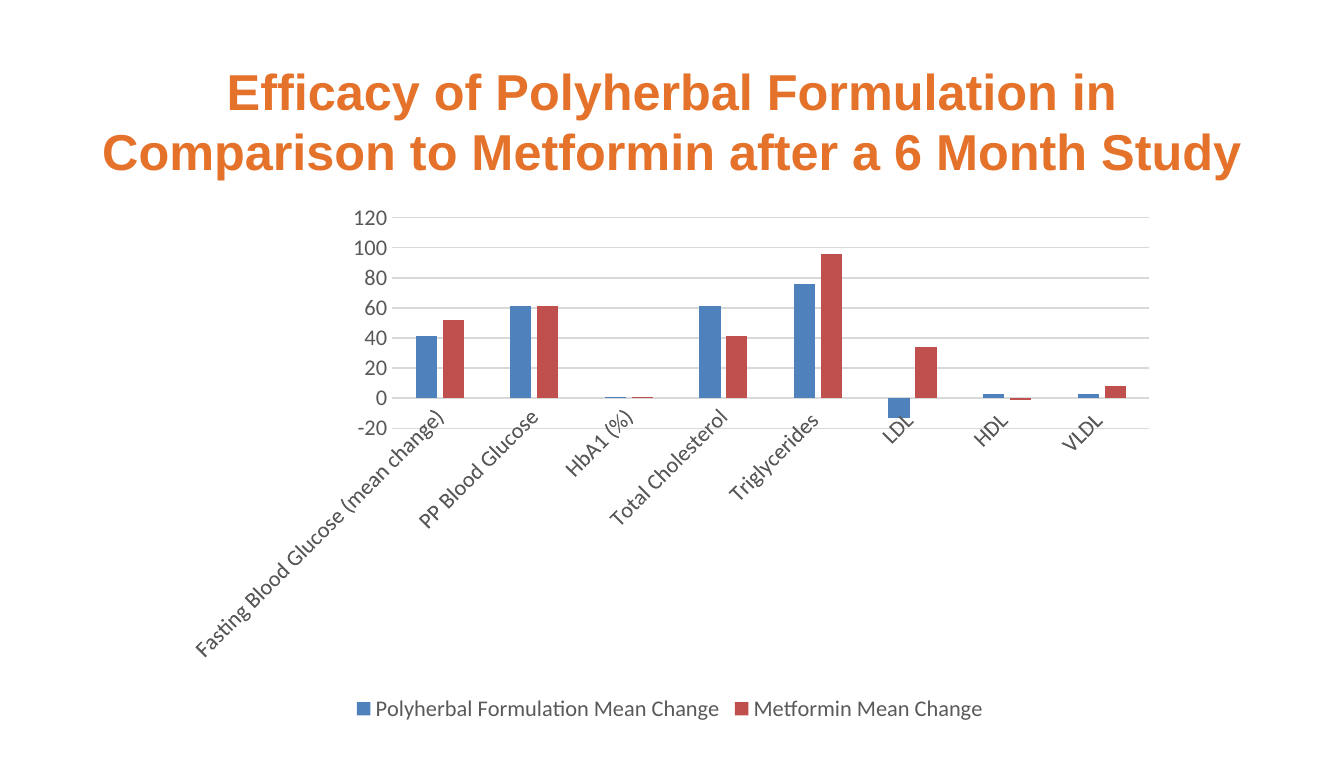
from dataclasses import dataclass

from lxml import etree
from pptx import Presentation
from pptx.chart.data import CategoryChartData
from pptx.dml.color import RGBColor
from pptx.enum.chart import XL_CHART_TYPE, XL_LEGEND_POSITION, XL_TICK_MARK
from pptx.enum.text import MSO_ANCHOR, PP_ALIGN
from pptx.oxml.ns import qn
from pptx.util import Pt

EMU_PER_PX = 9144  # 100 px to the inch
SLIDE_SIZE = (1000, 563)
TITLE_BOX = (50, 63, 900, 53)
CHART_BOX = (127, 152, 743, 389)
PLOT_BOX = (165, 9, 563, 157)  # within the chart box

TITLE = ("Efficacy of Polyherbal Formulation in Comparison to Metformin "
         "after a 6 Month Study")
MEASURES = ["Fasting Blood Glucose (mean change)", "PP Blood Glucose", "HbA1 (%)",
            "Total Cholesterol", "Triglycerides ", "LDL ", "HDL ", "VLDL "]
MEAN_CHANGES = {
    "Polyherbal Formulation Mean Change": [41, 61, 1, 61, 76, -13, 3, 3],
    "Metformin Mean Change": [52, 61, 1, 41, 96, 34, -1, 8],
}


@dataclass(frozen=True)
class Theme:
    title_font: str = "Arial"
    chart_font: str = "Calibri"
    title_size: int = 27
    label_size: int = 12
    title_color: str = "E5722A"
    label_color: str = "595959"
    grid_color: str = "D9D9D9"
    treatment_colors: tuple = ("4F81BD", "C0504D")
    grid_width: float = 0.75


THEME = Theme()


def px(*lengths):
    return [length * EMU_PER_PX for length in lengths]


def format_font(font, name, size, color, bold=False):
    font.name = name
    font.size = Pt(size)
    font.bold = bold
    font.color.rgb = RGBColor.from_string(color)


def write_text(frame, text, *, font, size, color, bold=False,
               align=PP_ALIGN.LEFT, anchor=MSO_ANCHOR.TOP):
    frame.word_wrap = True
    frame.vertical_anchor = anchor
    paragraph = frame.paragraphs[0]
    paragraph.alignment = align
    run = paragraph.add_run()
    run.text = text
    format_font(run.font, font, size, color, bold)


def format_line(line):
    line.color.rgb = RGBColor.from_string(THEME.grid_color)
    line.width = Pt(THEME.grid_width)


def place_title(slide, box):
    title = slide.shapes.title
    title.left, title.top, title.width, title.height = px(*box)
    write_text(title.text_frame, TITLE, font=THEME.title_font, size=THEME.title_size,
               color=THEME.title_color, bold=True, align=PP_ALIGN.CENTER,
               anchor=MSO_ANCHOR.MIDDLE)


def format_axes(chart):
    measures, change = chart.category_axis, chart.value_axis
    for axis in (measures, change):
        axis.major_tick_mark = axis.minor_tick_mark = XL_TICK_MARK.NONE
        format_font(axis.tick_labels.font, THEME.chart_font, THEME.label_size,
                    THEME.label_color)
    format_line(measures.format.line)
    # Slant the measure names upwards by 45 degrees
    measures._element.txPr.bodyPr.set("rot", "-2700000")
    change.minimum_scale, change.maximum_scale, change.major_unit = -20, 120, 20
    change.format.line.fill.background()
    change.has_major_gridlines = True
    format_line(change.major_gridlines.format.line)


def fix_plot_area(chart, plot_box, chart_size):
    """Hold the inner plot area at plot_box, as shares of the chart size."""
    plot_area = chart._chartSpace.chart.plotArea
    for old_layout in plot_area.findall(qn("c:layout")):
        plot_area.remove(old_layout)
    layout = etree.Element(qn("c:layout"))
    plot_area.insert(0, layout)
    manual = etree.SubElement(layout, qn("c:manualLayout"))
    width, height = chart_size
    shares = [length / whole for length, whole in zip(plot_box, (width, height) * 2)]
    settings = [("layoutTarget", "inner"), ("xMode", "edge"), ("yMode", "edge"),
                *zip("xywh", shares)]
    for tag, value in settings:
        etree.SubElement(manual, qn(f"c:{tag}")).set("val", str(value))


def place_chart(slide, box):
    data = CategoryChartData()
    data.categories = MEASURES
    for treatment, changes in MEAN_CHANGES.items():
        data.add_series(treatment, changes)
    chart = slide.shapes.add_chart(XL_CHART_TYPE.COLUMN_CLUSTERED, *px(*box), data).chart
    chart.has_title = False
    format_axes(chart)
    fix_plot_area(chart, PLOT_BOX, box[2:])

    plot = chart.plots[0]
    plot.gap_width, plot.overlap = 219, -27
    plot.vary_by_categories = False
    for series, color in zip(plot.series, THEME.treatment_colors):
        series.invert_if_negative = False
        series.format.fill.solid()
        series.format.fill.fore_color.rgb = RGBColor.from_string(color)

    chart.has_legend = True
    chart.legend.position = XL_LEGEND_POSITION.BOTTOM
    chart.legend.include_in_layout = False
    format_font(chart.legend.font, THEME.chart_font, THEME.label_size, THEME.label_color)


def main():
    presentation = Presentation()
    presentation.slide_width, presentation.slide_height = px(*SLIDE_SIZE)
    title_only = presentation.slide_layouts.get_by_name("Title Only")
    slide = presentation.slides.add_slide(title_only)
    place_title(slide, TITLE_BOX)
    place_chart(slide, CHART_BOX)
    presentation.save("out.pptx")


if __name__ == "__main__":
    main()
